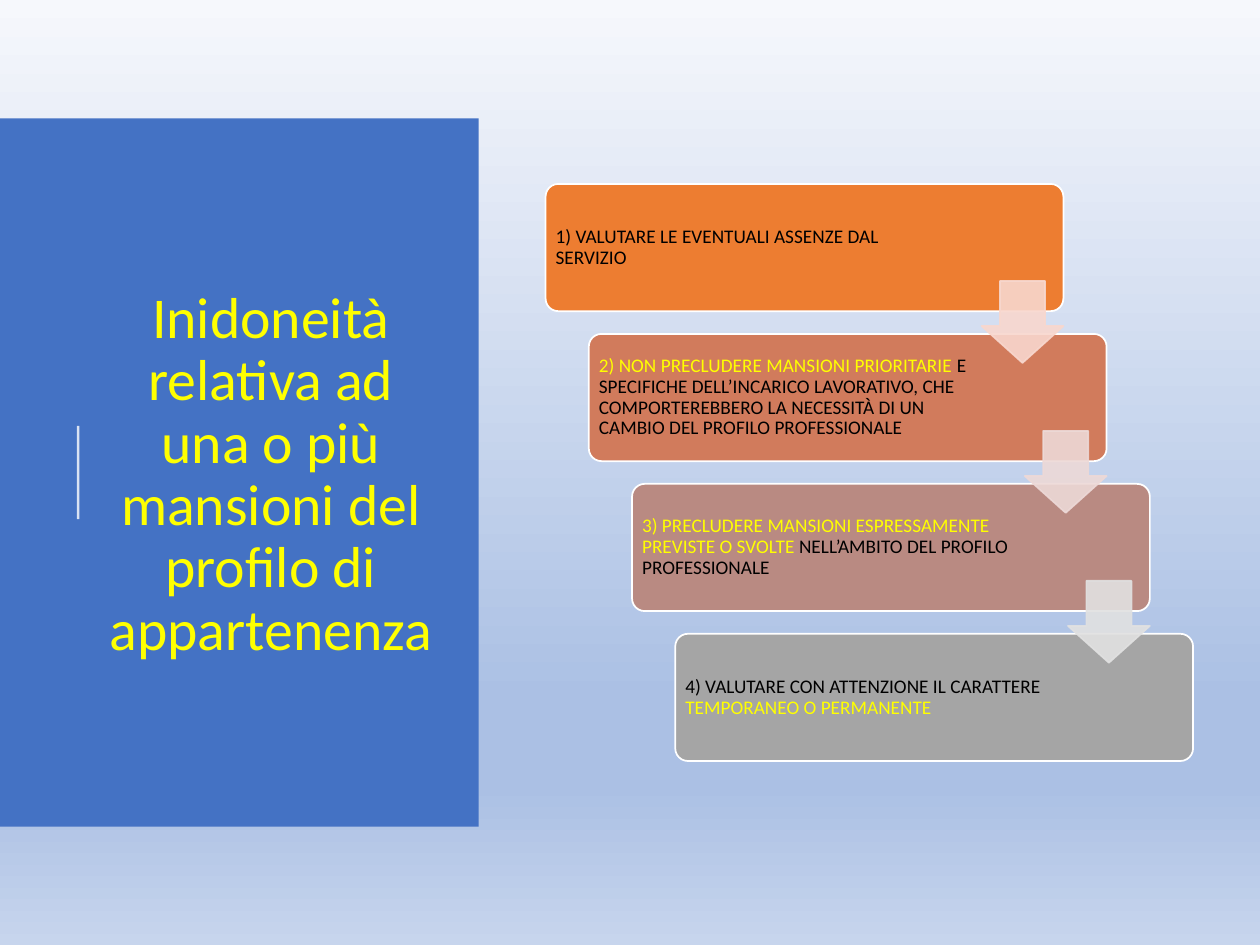
from dataclasses import dataclass

from lxml import etree
from pptx import Presentation
from pptx.dml.color import RGBColor
from pptx.enum import shapes, text
from pptx.oxml.ns import qn
from pptx.util import Inches, Pt

WHITE = RGBColor(0xFF, 0xFF, 0xFF)
BLACK = RGBColor(0x00, 0x00, 0x00)
YELLOW = RGBColor(0xFF, 0xFF, 0x00)
BLUE = RGBColor(0x44, 0x72, 0xC4)
ORANGE = RGBColor(0xED, 0x7D, 0x31)
CORAL = RGBColor(0xD1, 0x7B, 0x5C)
ROSE = RGBColor(0xB9, 0x8A, 0x82)
GREY = RGBColor(0xA5, 0xA5, 0xA5)
SKY = [
    (0, RGBColor(0xF6, 0xF8, 0xFC)),
    (74, RGBColor(0xAB, 0xC0, 0xE4)),
    (83, RGBColor(0xAB, 0xC0, 0xE4)),
    (100, RGBColor(0xC7, 0xD5, 0xED)),
]
ARROWS = [
    RGBColor(0xF8, 0xD7, 0xCE),
    RGBColor(0xED, 0xD9, 0xD7),
    RGBColor(0xE1, 0xE1, 0xE1),
]
FONT = "Calibri"
LEFT, TOP = 4.33, 1.46
STEP_X, STEP_Y = 0.343, 1.19
BOX_W, BOX_H = 4.11, 1.01


@dataclass
class Step:
    fill: RGBColor
    runs: list[tuple[str, RGBColor]]
    width: float = 3.06


STEPS = [
    Step(ORANGE, [("1) VALUTARE LE EVENTUALI ASSENZE DAL SERVIZIO", BLACK)], 2.94),
    Step(CORAL, [
        ("2) NON PRECLUDERE MANSIONI PRIORITARIE ", YELLOW),
        ("E SPECIFICHE DELL’INCARICO LAVORATIVO, CHE COMPORTEREBBERO "
         "LA NECESSITÀ DI UN CAMBIO DEL PROFILO PROFESSIONALE", BLACK),
    ]),
    Step(ROSE, [
        ("3) PRECLUDERE MANSIONI ESPRESSAMENTE PREVISTE O SVOLTE ", YELLOW),
        ("NELL’AMBITO DEL PROFILO PROFESSIONALE", BLACK),
    ]),
    Step(GREY, [
        ("4) VALUTARE CON ATTENZIONE IL CARATTERE ", BLACK),
        ("TEMPORANEO O PERMANENTE", YELLOW),
    ]),
]


def fade(shape, percent: int) -> None:
    """Set the opacity of every colour in the shape's fill and line."""
    for color in shape.element.spPr.iter(qn("a:srgbClr")):
        etree.SubElement(color, qn("a:alpha"), val=str(percent * 1000))


def paint_sky(slide) -> None:
    fill = slide.background.fill
    fill.gradient()
    fill.gradient_angle = 270
    stops = next(slide.element.iter(qn("a:gsLst")))
    for stop in list(stops):
        stops.remove(stop)
    for place, color in SKY:
        stop = etree.SubElement(stops, qn("a:gs"), pos=str(place * 1000))
        etree.SubElement(stop, qn("a:srgbClr"), val=str(color))


def add_block(slide, kind, left: float, top: float, width: float,
              height: float, fill: RGBColor, line: RGBColor | None = None):
    block = slide.shapes.add_shape(
        kind, Inches(left), Inches(top), Inches(width), Inches(height))
    block.shadow.inherit = False
    block.fill.solid()
    block.fill.fore_color.rgb = fill
    if line is None:
        block.line.fill.background()
    else:
        block.line.color.rgb = line
        block.line.width = Pt(1)
    return block


def add_title(slide) -> None:
    title = slide.shapes.title
    title.left, title.top = Inches(0.77), Inches(1.52)
    title.width, title.height = Inches(2.76), Inches(4.51)
    frame = title.text_frame
    frame.text = ("Inidoneità relativa ad una o più mansioni "
                  "del profilo di appartenenza")
    frame.word_wrap = True
    frame.auto_size = text.MSO_AUTO_SIZE.NONE
    frame.vertical_anchor = text.MSO_ANCHOR.MIDDLE
    para = frame.paragraphs[0]
    para.alignment = text.PP_ALIGN.CENTER
    para.line_spacing = 0.9
    font = para.runs[0].font
    font.name, font.size = FONT, Pt(33)
    font.color.rgb = YELLOW

    panel = add_block(slide, shapes.MSO_SHAPE.RECTANGLE, 0, 0.94, 3.8, 5.62, BLUE)
    title.element.addprevious(panel.element)


def add_rule(slide) -> None:
    rule = slide.shapes.add_connector(
        shapes.MSO_CONNECTOR.STRAIGHT,
        Inches(0.62), Inches(4.12), Inches(0.62), Inches(3.38))
    rule.line.color.rgb = WHITE
    rule.line.width = Pt(1.5)
    fade(rule, 80)
    etree.SubElement(rule.element.spPr, qn("a:effectLst"))


def add_step(slide, step: Step, left: float, top: float) -> None:
    card = add_block(slide, shapes.MSO_SHAPE.ROUNDED_RECTANGLE,
                     left, top, BOX_W, BOX_H, step.fill, WHITE)
    card.adjustments[0] = 0.1
    label = slide.shapes.add_textbox(
        Inches(left + 0.03), Inches(top + 0.03), Inches(step.width), Inches(0.95))
    frame = label.text_frame
    frame.word_wrap = True
    frame.vertical_anchor = text.MSO_ANCHOR.MIDDLE
    frame.margin_left = frame.margin_right = Inches(0.05)
    frame.margin_top = frame.margin_bottom = Inches(0.05)
    para = frame.paragraphs[0]
    para.line_spacing = 0.9
    for words, color in step.runs:
        run = para.add_run()
        run.text = words
        run.font.name, run.font.size = FONT, Pt(11)
        run.font.color.rgb = color


def add_arrow(slide, color: RGBColor, left: float, top: float) -> None:
    arrow = add_block(slide, shapes.MSO_SHAPE.DOWN_ARROW,
                      left, top, 0.65, 0.65, color, color)
    arrow.adjustments[0] = 0.55
    arrow.adjustments[1] = 0.45
    fade(arrow, 90)


def main() -> None:
    deck = Presentation()
    deck.slide_width, deck.slide_height = Inches(10), Inches(7.5)
    slide = deck.slides.add_slide(deck.slide_layouts[5])
    paint_sky(slide)
    add_title(slide)
    add_rule(slide)
    for i, step in enumerate(STEPS):
        add_step(slide, step, LEFT + i * STEP_X, TOP + i * STEP_Y)
    for i, color in enumerate(ARROWS):
        add_arrow(slide, color, LEFT + 3.46 + i * STEP_X, TOP + 0.77 + i * STEP_Y)
    deck.save("out.pptx")


if __name__ == "__main__":
    main()
